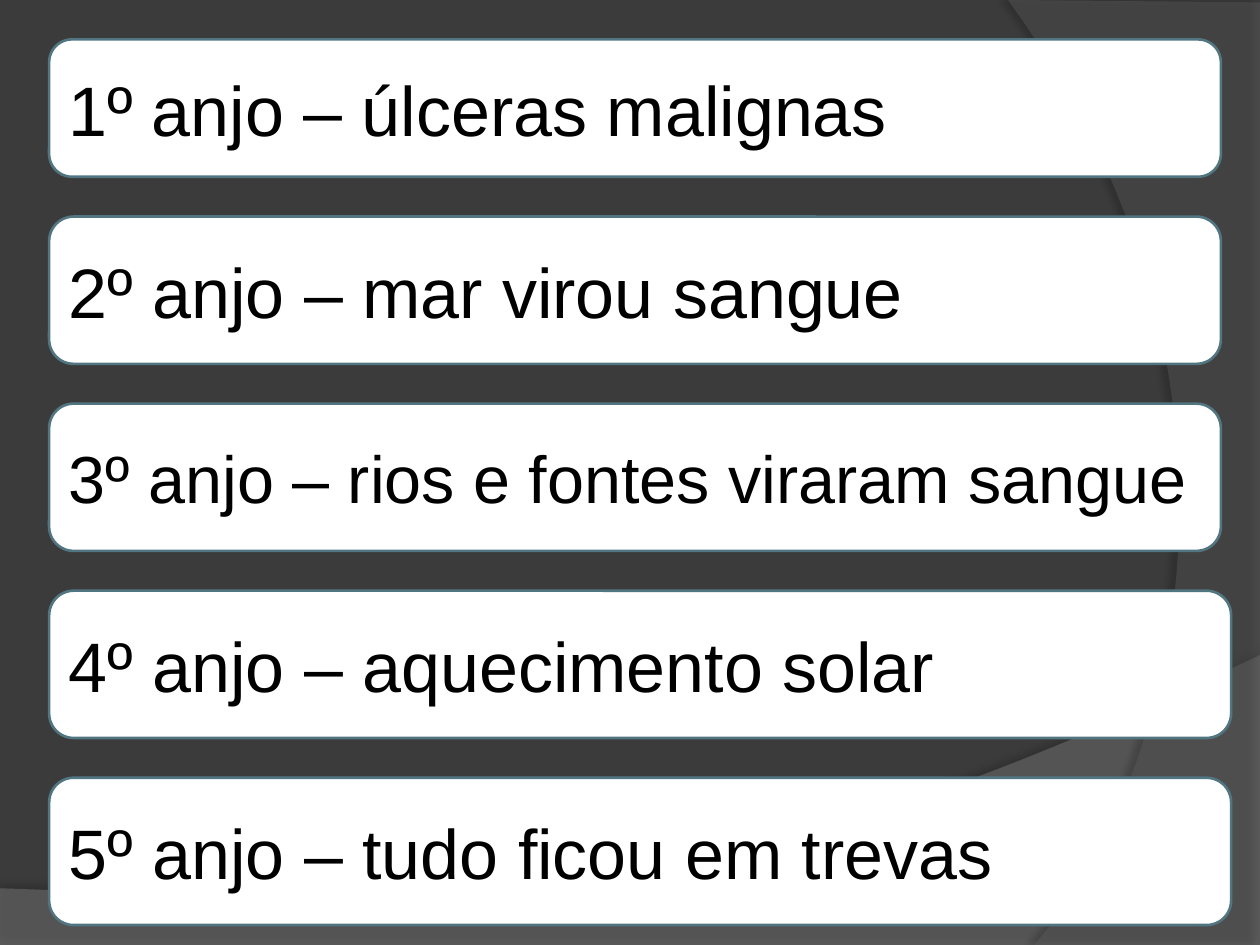
from dataclasses import dataclass

from lxml import etree
from pptx import Presentation
from pptx.dml.color import RGBColor
from pptx.enum.shapes import MSO_SHAPE
from pptx.enum.text import MSO_ANCHOR, PP_ALIGN
from pptx.oxml.ns import qn
from pptx.util import Pt

ROUNDED = MSO_SHAPE.ROUNDED_RECTANGLE
MIDDLE = MSO_ANCHOR.MIDDLE
LEFT = PP_ALIGN.LEFT

COLORS = {
    "background": "3B3B3B",
    "wave": "7F7F7F",
    "arc": "5E5E5E",
    "card": "FFFFFF",
    "border": "517682",
    "text": "000000",
    "shadow": "000000",
}
FONT = "Arial"
CARD_LEFT, CARD_TOP, CARD_GAP = 28.1, 22.5, 22.75
CURVE_STEPS = 48

Point = tuple[float, float]


@dataclass
class Card:
    text: str
    width: float = 669.6
    height: float = 84.15
    size: float = 40


@dataclass
class Shadow:
    opacity: int
    blur: float
    distance: float
    angle: int


@dataclass
class Backdrop:
    color: str
    opacity: int
    points: list[Point]
    shadow: Shadow


def rgb(name: str) -> RGBColor:
    return RGBColor.from_string(COLORS[name])


def bezier(a: Point, b: Point, c: Point, d: Point) -> list[Point]:
    def at(t: float) -> Point:
        u = 1 - t
        weights = (u**3, 3 * u * u * t, 3 * u * t * t, t**3)
        x, y = (sum(w * v for w, v in zip(weights, axis)) for axis in zip(a, b, c, d))
        return x, y

    return [at(i / CURVE_STEPS) for i in range(CURVE_STEPS + 1)]


def set_opacity(color_element, percent: int) -> None:
    etree.SubElement(color_element, qn("a:alpha"), val=str(percent * 1000))


def add_shadow(sp, shadow: Shadow) -> None:
    effects = etree.SubElement(sp._element.spPr, qn("a:effectLst"))
    outer = etree.SubElement(
        effects,
        qn("a:outerShdw"),
        blurRad=str(Pt(shadow.blur)),
        dist=str(Pt(shadow.distance)),
        dir=str(shadow.angle * 60000),
        rotWithShape="0",
    )
    color = etree.SubElement(outer, qn("a:srgbClr"), val=COLORS["shadow"])
    set_opacity(color, shadow.opacity)


def add_backdrop(s, backdrop: Backdrop) -> None:
    points = [(Pt(x), Pt(y)) for x, y in backdrop.points]
    builder = s.shapes.build_freeform(*points[0])
    builder.add_line_segments(points[1:], close=True)
    sp = builder.convert_to_shape()
    sp.fill.solid()
    sp.fill.fore_color.rgb = rgb(backdrop.color)
    set_opacity(sp._element.spPr.find(f"{qn('a:solidFill')}/{qn('a:srgbClr')}"), backdrop.opacity)
    sp.line.fill.background()
    add_shadow(sp, backdrop.shadow)


def add_card(s, card: Card, top: float) -> None:
    sp = s.shapes.add_shape(ROUNDED, Pt(CARD_LEFT), Pt(top), Pt(card.width), Pt(card.height))
    sp.shadow.inherit = False
    sp.fill.solid()
    sp.fill.fore_color.rgb = rgb("card")
    sp.line.color.rgb = rgb("border")
    sp.line.width = Pt(1.5)
    tf = sp.text_frame
    tf.word_wrap = True
    tf.vertical_anchor = MIDDLE
    tf.text = card.text
    p = tf.paragraphs[0]
    p.alignment = LEFT
    font = p.runs[0].font
    font.name = FONT
    font.size = Pt(card.size)
    font.color.rgb = rgb("text")


BACKDROPS = [
    Backdrop(
        "wave",
        45,
        [(0, 540), (720, 540), *bezier((720, 374.4), (402.5, 524.9), (281.5, 517.7), (0, 507.6))],
        Shadow(35, 4, 3.5, 270),
    ),
    Backdrop(
        "arc",
        40,
        [(720, 1.4), (720, 540), *bezier((591, 540), (673.2, 445.7), (733, 216), (576, 0))],
        Shadow(45, 4, 4, 180),
    ),
]
CARDS = [
    Card("1º anjo – úlceras malignas", height=78.5),
    Card("2º anjo – mar virou sangue"),
    Card("3º anjo – rios e fontes viraram sangue", size=38),
    Card("4º anjo – aquecimento solar", width=675.4),
    Card("5º anjo – tudo ficou em trevas", width=675.4),
]


def main() -> None:
    """Build the slide listing the five angels."""
    prs = Presentation()
    prs.slide_width, prs.slide_height = Pt(720), Pt(540)
    s = prs.slides.add_slide(prs.slide_layouts[6])
    s.background.fill.solid()
    s.background.fill.fore_color.rgb = rgb("background")
    for backdrop in BACKDROPS:
        add_backdrop(s, backdrop)
    top = CARD_TOP
    for card in CARDS:
        add_card(s, card, top)
        top += card.height + CARD_GAP
    prs.save("out.pptx")


if __name__ == "__main__":
    main()
